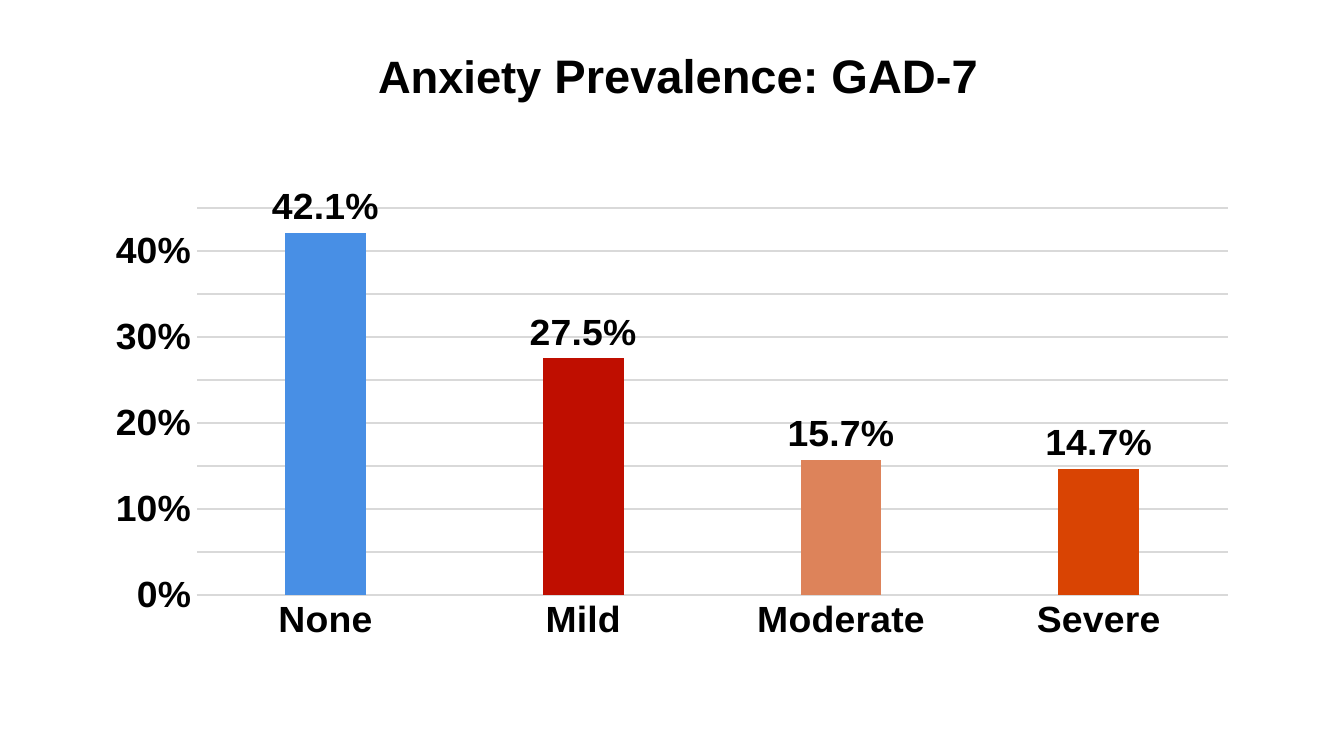
from pptx import Presentation
from pptx.chart.data import CategoryChartData
from pptx.dml.color import RGBColor
from pptx.enum.chart import XL_CHART_TYPE, XL_LABEL_POSITION, XL_TICK_MARK
from pptx.enum.text import MSO_ANCHOR, PP_ALIGN
from pptx.util import Cm, Pt


def paint(color_format, hex_color):
    color_format.rgb = RGBColor.from_string(hex_color)


def add_text(paragraph, text, *, font="Arial", size=20, color="000000", bold=True):
    run = paragraph.add_run()
    run.text = text
    style_font(run.font, font, size, color, bold)


def style_font(target, font, size, color, bold):
    target.name = font
    target.size = Pt(size)
    target.bold = bold
    target.fill.solid()
    paint(target.fill.fore_color, color)


class SlideBuilder:
    font = "Arial"
    ink = "000000"
    grid = "D9D9D9"
    chart_size = 20

    def __init__(self, slide):
        self.slide = slide

    def title(self, parts, left, top, width, height):
        frame = self.slide.shapes.add_textbox(
            Cm(left), Cm(top), Cm(width), Cm(height)
        ).text_frame
        frame.word_wrap = True
        frame.vertical_anchor = MSO_ANCHOR.BOTTOM
        heading = frame.paragraphs[0]
        heading.alignment = PP_ALIGN.CENTER
        for text, size in parts:
            add_text(heading, text, font=self.font, size=size, color=self.ink)

    def chart_font(self, target):
        style_font(target, self.font, self.chart_size, self.ink, True)

    def grid_line(self, line):
        line.width = Pt(0.75)
        line.fill.solid()
        paint(line.color, self.grid)

    def columns(self, severities, left, top, width, height):
        prevalence = CategoryChartData(number_format="0.0%")
        prevalence.categories = [name for name, _, _ in severities]
        prevalence.add_series("Series 1", [share for _, share, _ in severities])
        chart = self.slide.shapes.add_chart(
            XL_CHART_TYPE.COLUMN_CLUSTERED,
            Cm(left), Cm(top), Cm(width), Cm(height), prevalence,
        ).chart
        chart.has_legend = False
        chart.has_title = False
        self.chart_font(chart.font)

        plot = chart.plots[0]
        plot.gap_width = 219
        plot.overlap = -27
        plot.vary_by_categories = False
        bars = plot.series[0]
        bars.format.fill.solid()
        paint(bars.format.fill.fore_color, "FF1300")
        for index, (_, _, color) in enumerate(severities):
            fill = bars.points[index].format.fill
            fill.solid()
            paint(fill.fore_color, color)

        labels = bars.data_labels
        labels.show_value = True
        labels.number_format = "0.0%"
        labels.number_format_is_linked = False
        labels.position = XL_LABEL_POSITION.OUTSIDE_END
        self.chart_font(labels.font)

        for axis in (chart.category_axis, chart.value_axis):
            axis.major_tick_mark = XL_TICK_MARK.NONE
            axis.minor_tick_mark = XL_TICK_MARK.NONE
            self.chart_font(axis.tick_labels.font)
        self.grid_line(chart.category_axis.format.line)

        shares = chart.value_axis
        shares.minimum_scale = 0
        shares.maximum_scale = 0.45
        shares.major_unit = 0.05
        shares.tick_labels.number_format = "0%"
        shares.tick_labels.number_format_is_linked = False
        shares.format.line.fill.background()
        self.grid_line(shares.major_gridlines.format.line)


def main():
    deck = Presentation()
    deck.slide_width = Cm(25.4)
    deck.slide_height = Cm(14.29)
    builder = SlideBuilder(deck.slides.add_slide(deck.slide_layouts[6]))
    builder.title(
        [("Anxiety", 24.3), (" Prevalence: GAD-7", 25.2)],
        left=1.04, top=0.66, width=23.55, height=1.42,
    )
    builder.columns(
        [
            ("None", 0.421, "488FE5"),
            ("Mild", 0.275, "BF0E00"),
            ("Moderate", 0.157, "DD835A"),
            ("Severe", 0.147, "D94403"),
        ],
        left=1.75, top=3.53, width=21.89, height=8.76,
    )
    deck.save("out.pptx")


if __name__ == "__main__":
    main()
